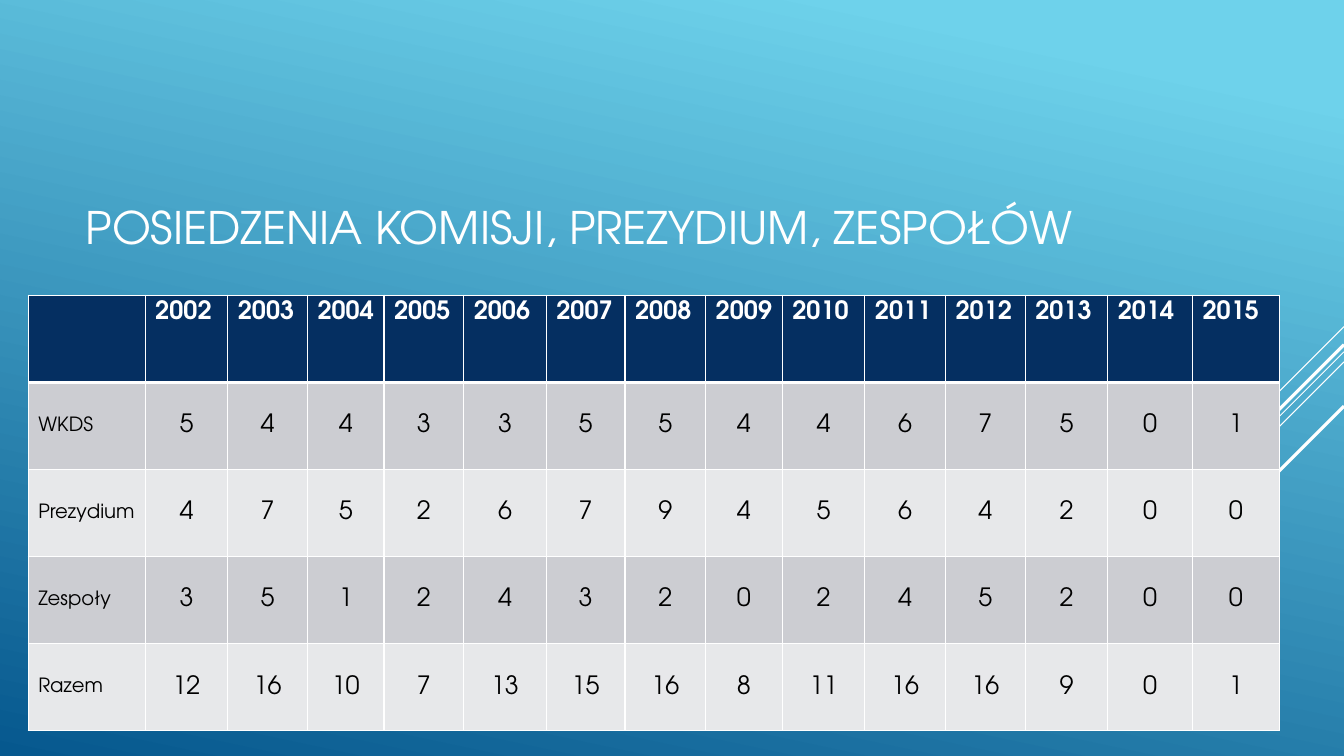
import pptx
import pptx.dml.color
import pptx.enum.shapes
import pptx.enum.text
import pptx.oxml
import pptx.oxml.ns
import pptx.util
from pptx.util import Inches

RGBColor = pptx.dml.color.RGBColor
WHITE = RGBColor(0xFF, 0xFF, 0xFF)
BLACK = RGBColor(0x00, 0x00, 0x00)
SKY = RGBColor(0x6E, 0xD2, 0xEB)
OCEAN = RGBColor(0x06, 0x58, 0x8E)
NAVY = RGBColor(0x05, 0x2F, 0x61)
GREY = RGBColor(0xCC, 0xCD, 0xD2)
PALE_GREY = RGBColor(0xE7, 0xE8, 0xEA)
FONT = "TeX Gyre Adventor"


def add_run(paragraph, text, size, color, bold=False):
    run = paragraph.add_run()
    run.text = text
    run.font.name = FONT
    run.font.size = pptx.util.Pt(size)
    run.font.bold = bold
    run.font.color.rgb = color


def add_border(cell, side, width):
    properties = cell._tc.get_or_add_tcPr()
    border = pptx.oxml.parse_xml(
        f'<a:{side} {pptx.oxml.ns.nsdecls("a")} w="{pptx.util.Pt(width)}">'
        f'<a:solidFill><a:srgbClr val="{WHITE}"/></a:solidFill></a:{side}>'
    )
    properties.append(border)


presentation = pptx.Presentation()
presentation.slide_width = Inches(13.33)
presentation.slide_height = Inches(7.5)
slide = presentation.slides.add_slide(presentation.slide_layouts[6])

backdrop = slide.background.fill
backdrop.gradient()
backdrop.gradient_angle = 258
for stop, position, color in zip(backdrop.gradient_stops, (0.1, 1), (SKY, OCEAN)):
    stop.position = position
    stop.color.rgb = color

RIGHT_EDGE = 13.33
for top, reach, width in [
    (3.24, 1, 0.75),
    (3.49, 3.26, 0.75),
    (3.59, 2.07, 0.75),
    (3.42, 1.91, 2.25),
    (4.03, 1.39, 2.25),
]:
    stripe = slide.shapes.add_connector(
        pptx.enum.shapes.MSO_CONNECTOR.STRAIGHT,
        Inches(RIGHT_EDGE), Inches(top),
        Inches(RIGHT_EDGE - reach), Inches(top + reach),
    )
    stripe.line.color.rgb = WHITE
    stripe.line.width = pptx.util.Pt(width)
    stripe._element.spPr.append(
        pptx.oxml.parse_xml(f'<a:effectLst {pptx.oxml.ns.nsdecls("a")}/>')
    )

title = slide.shapes.add_textbox(Inches(0.75), Inches(0.75), Inches(11), Inches(3)).text_frame
title.word_wrap = True
title.vertical_anchor = pptx.enum.text.MSO_ANCHOR.MIDDLE
add_run(title.paragraphs[0], "POSIEDZENIA KOMISJI, PREZYDIUM, ZESPOŁÓW", 32, WHITE)

meetings = [
    ["", *range(2002, 2016)],
    ["WKDS", 5, 4, 4, 3, 3, 5, 5, 4, 4, 6, 7, 5, 0, 1],
    ["Prezydium", 4, 7, 5, 2, 6, 7, 9, 4, 5, 6, 4, 2, 0, 0],
    ["Zespoły", 3, 5, 1, 2, 4, 3, 2, 0, 2, 4, 5, 2, 0, 0],
    ["Razem", 12, 16, 10, 7, 13, 15, 16, 8, 11, 16, 16, 9, 0, 1],
]
column_widths = [1.16, 0.82, 0.79, 0.76, 0.79, 0.82, 0.78, 0.8,
                 0.76, 0.82, 0.8, 0.79, 0.82, 0.84, 0.86]
meetings_table = slide.shapes.add_table(
    len(meetings), len(column_widths),
    Inches(0.28), Inches(2.93), Inches(12.4), Inches(4.32),
).table
for column, width in zip(meetings_table.columns, column_widths):
    column.width = Inches(width)

for row, values in enumerate(meetings):
    header = row == 0
    for col, value in enumerate(values):
        cell = meetings_table.cell(row, col)
        for side in ("lnL", "lnR", "lnT", "lnB"):
            thick = (header and side == "lnB") or (row == 1 and side == "lnT")
            add_border(cell, side, 3 if thick else 1)
        cell.fill.solid()
        cell.fill.fore_color.rgb = NAVY if header else GREY if row % 2 else PALE_GREY
        paragraph = cell.text_frame.paragraphs[0]
        if not header:
            cell.vertical_anchor = pptx.enum.text.MSO_ANCHOR.MIDDLE
            if col > 0:
                paragraph.alignment = pptx.enum.text.PP_ALIGN.CENTER
        if value != "":
            add_run(paragraph, str(value), 18 if col else 14, WHITE if header else BLACK, header)

presentation.save("out.pptx")
